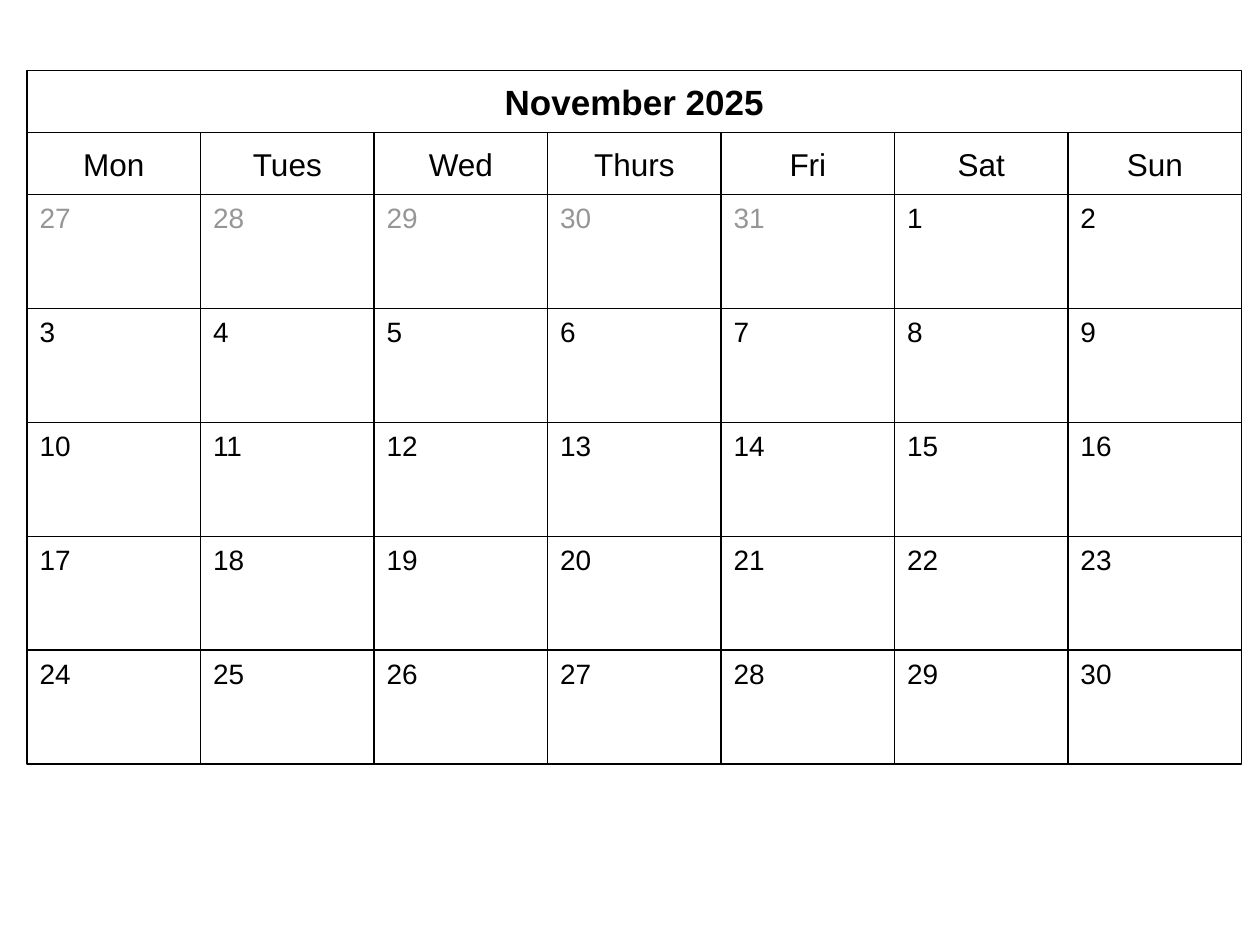
from pptx import Presentation
from pptx import util as u
from pptx.dml.color import RGBColor
from pptx.enum import shapes, text

Pt = u.Pt
COLORS = {"paper": "FFFFFF", "ink": "000000", "other_month": "969696"}
LEFT, TOP = 15.5, 40.3
COLUMN_WIDTH, HEADER_HEIGHT, WEEK_HEIGHT = 99.14, 35.4, 65.1
WEEKDAYS = ["Mon", "Tues", "Wed", "Thurs", "Fri", "Sat", "Sun"]
WEEKS = 5
DAYS = [*range(27, 32), *range(1, 31)]
LEADING_DAYS = 5
HANGING_INDENT = 27


def add_cell(left, top, width, height, label, size, color="ink"):
    """Add one outlined calendar rectangle with its label at the top left."""
    box = slide.shapes.add_shape(
        shapes.MSO_SHAPE.RECTANGLE, Pt(left), Pt(top), Pt(width), Pt(height))
    box.shadow.inherit = False
    box.fill.background()
    box.line.color.rgb = RGBColor.from_string(COLORS["ink"])
    box.line.width = Pt(0.75)
    frame = box.text_frame
    frame.word_wrap = True
    frame.vertical_anchor = text.MSO_ANCHOR.TOP
    frame.text = label
    para = frame.paragraphs[0]
    para.alignment = text.PP_ALIGN.LEFT
    font = para.runs[0].font
    font.name = "Arial"
    font.size = Pt(size)
    font.color.rgb = RGBColor.from_string(COLORS[color])
    return box


def add_header(left, top, width, label, size):
    """Add a white cell with a centred label and a hanging indent."""
    box = add_cell(left, top, width, HEADER_HEIGHT, label, size)
    box.fill.solid()
    box.fill.fore_color.rgb = RGBColor.from_string(COLORS["paper"])
    frame = box.text_frame
    frame.vertical_anchor = text.MSO_ANCHOR.MIDDLE
    frame.margin_top = frame.margin_bottom = Pt(1.5)
    para = frame.paragraphs[0]
    para.alignment = text.PP_ALIGN.CENTER
    properties = para._p.get_or_add_pPr()
    properties.set("marL", str(Pt(HANGING_INDENT)))
    properties.set("indent", str(-Pt(HANGING_INDENT)))
    return box


deck = Presentation()
deck.slide_width, deck.slide_height = Pt(720), Pt(540)
slide = deck.slides.add_slide(deck.slide_layouts[6])

# Month title and weekday names
title = add_header(LEFT, TOP, COLUMN_WIDTH * len(WEEKDAYS), "November 2025", 20)
title.text_frame.paragraphs[0].runs[0].font.bold = True
for column, weekday in enumerate(WEEKDAYS):
    add_header(LEFT + column * COLUMN_WIDTH, TOP + HEADER_HEIGHT,
               COLUMN_WIDTH, weekday, 18)

# Days, week by week
weeks_top = TOP + 2 * HEADER_HEIGHT
for index, day in enumerate(DAYS):
    week, column = divmod(index, len(WEEKDAYS))
    color = "other_month" if index < LEADING_DAYS else "ink"
    add_cell(LEFT + column * COLUMN_WIDTH, weeks_top + week * WEEK_HEIGHT,
             COLUMN_WIDTH, WEEK_HEIGHT, str(day), 16, color)

deck.save("out.pptx")
